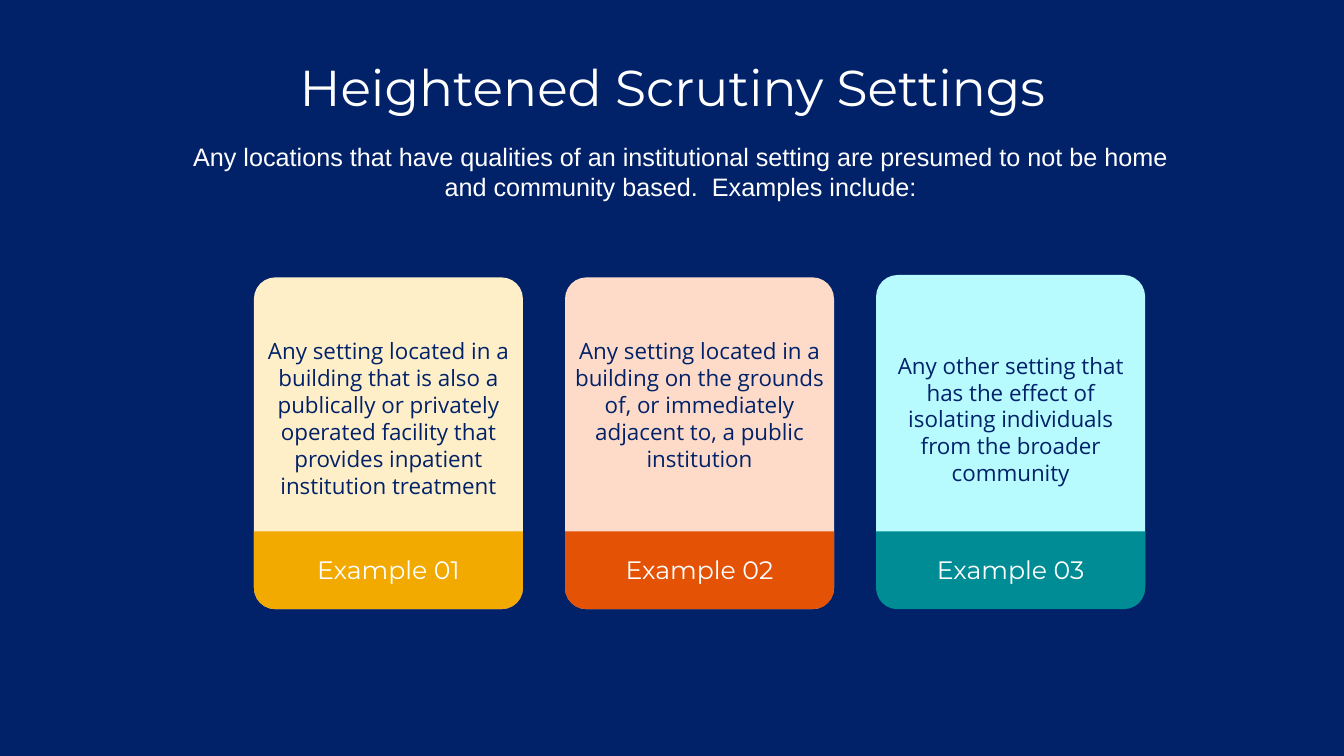
from dataclasses import dataclass

from pptx import Presentation
from pptx.dml.color import RGBColor
from pptx.enum.shapes import MSO_SHAPE
from pptx.enum.text import MSO_ANCHOR, PP_ALIGN
from pptx.slide import Slide
from pptx.text.text import TextFrame
from pptx.util import Cm, Length, Pt

CARD_SHAPE = MSO_SHAPE.ROUNDED_RECTANGLE
BAND_SHAPE = MSO_SHAPE.ROUND_2_SAME_RECTANGLE
CENTER = PP_ALIGN.CENTER
TOP, MIDDLE = MSO_ANCHOR.TOP, MSO_ANCHOR.MIDDLE

NAVY, WHITE = "012169", "FFFFFF"
HEADING_FONT, INTRO_FONT, BODY_FONT = "Montserrat", "Arial", "Open Sans"

FIRST_CARD_LEFT, CARD_PITCH = 6.4, 7.84
CARD_WIDTH, CARD_HEIGHT = 6.78, 8.36
BAND_TOP, BAND_HEIGHT = 13.39, 1.96
LABEL_TOP, LABEL_HEIGHT = 13.84, 1.02


@dataclass
class Box:
    """A rectangle in centimetres."""
    left: float
    top: float
    width: float
    height: float

    def lengths(self) -> tuple[Length, Length, Length, Length]:
        return Cm(self.left), Cm(self.top), Cm(self.width), Cm(self.height)


@dataclass
class Example:
    label: str
    description: str
    pale: str
    strong: str
    card_top: float
    text_top: float
    text_height: float


EXAMPLES = [
    Example("Example 01",
            "Any setting located in a building that is also a publically or "
            "privately operated facility that provides inpatient institution treatment",
            "FFEFC9", "F2A900", 6.99, 8.38, 4.37),
    Example("Example 02",
            "Any setting located in a building on the grounds of, or "
            "immediately adjacent to, a public institution",
            "FEDBC9", "E35205", 6.99, 8.38, 3.68),
    Example("Example 03",
            "Any other setting that has the effect of isolating individuals "
            "from the broader community",
            "B7FBFF", "008C95", 6.93, 8.74, 3.0),
]


def color(hex_code: str) -> RGBColor:
    return RGBColor.from_string(hex_code)


def write(frame: TextFrame, text: str, font: str, size: float, hex_code: str,
          spacing: float | Length = 1.0, anchor: MSO_ANCHOR = TOP) -> None:
    """Fill a frame with one centred paragraph."""
    frame.word_wrap = True
    frame.vertical_anchor = anchor
    frame.text = text
    paragraph = frame.paragraphs[0]
    paragraph.alignment = CENTER
    paragraph.line_spacing = spacing
    paragraph.space_before = Pt(0)
    paragraph.font.name = font
    paragraph.font.size = Pt(size)
    paragraph.font.color.rgb = color(hex_code)


def place(placeholder, box: Box) -> TextFrame:
    """Move a placeholder and return its text frame."""
    (placeholder.left, placeholder.top,
     placeholder.width, placeholder.height) = box.lengths()
    return placeholder.text_frame


def add_panel(slide: Slide, kind: MSO_SHAPE, box: Box, fill: str,
              corners: list[float]) -> None:
    panel = slide.shapes.add_shape(kind, *box.lengths())
    panel.shadow.inherit = False
    panel.fill.solid()
    panel.fill.fore_color.rgb = color(fill)
    panel.line.fill.background()
    for index, corner in enumerate(corners):
        panel.adjustments[index] = corner


def add_example(slide: Slide, example: Example, left: float) -> None:
    card = Box(left, example.card_top, CARD_WIDTH, CARD_HEIGHT)
    band = Box(left, BAND_TOP, CARD_WIDTH, BAND_HEIGHT)
    add_panel(slide, CARD_SHAPE, card, example.pale, [0.08])
    add_panel(slide, BAND_SHAPE, band, example.strong, [0, 0.27])

    text_box = Box(left, example.text_top, CARD_WIDTH, example.text_height)
    description = slide.shapes.add_textbox(*text_box.lengths())
    write(description.text_frame, example.description, BODY_FONT, 16, NAVY, Pt(19.2))

    label_box = Box(left, LABEL_TOP, CARD_WIDTH, LABEL_HEIGHT)
    label = slide.shapes.add_textbox(*label_box.lengths())
    write(label.text_frame, example.label, HEADING_FONT, 18, WHITE)


def main() -> None:
    deck = Presentation()
    deck.slide_width, deck.slide_height = Cm(33.87), Cm(19.05)
    slide = deck.slides.add_slide(deck.slide_layouts[0])
    slide.background.fill.solid()
    slide.background.fill.fore_color.rgb = color(NAVY)

    heading = place(slide.shapes.title, Box(2.34, 1.04, 29.21, 2.46))
    write(heading, "Heightened Scrutiny Settings", HEADING_FONT, 36, WHITE, 0.9, MIDDLE)

    intro = place(slide.placeholders[1], Box(4.45, 3.43, 25.4, 1.22))
    write(intro,
          "Any locations that have qualities of an institutional setting are presumed "
          "to not be home and community based.  Examples include:",
          INTRO_FONT, 18, WHITE, Pt(21.6))

    for index, example in enumerate(EXAMPLES):
        add_example(slide, example, FIRST_CARD_LEFT + index * CARD_PITCH)

    deck.save("out.pptx")


if __name__ == "__main__":
    main()
